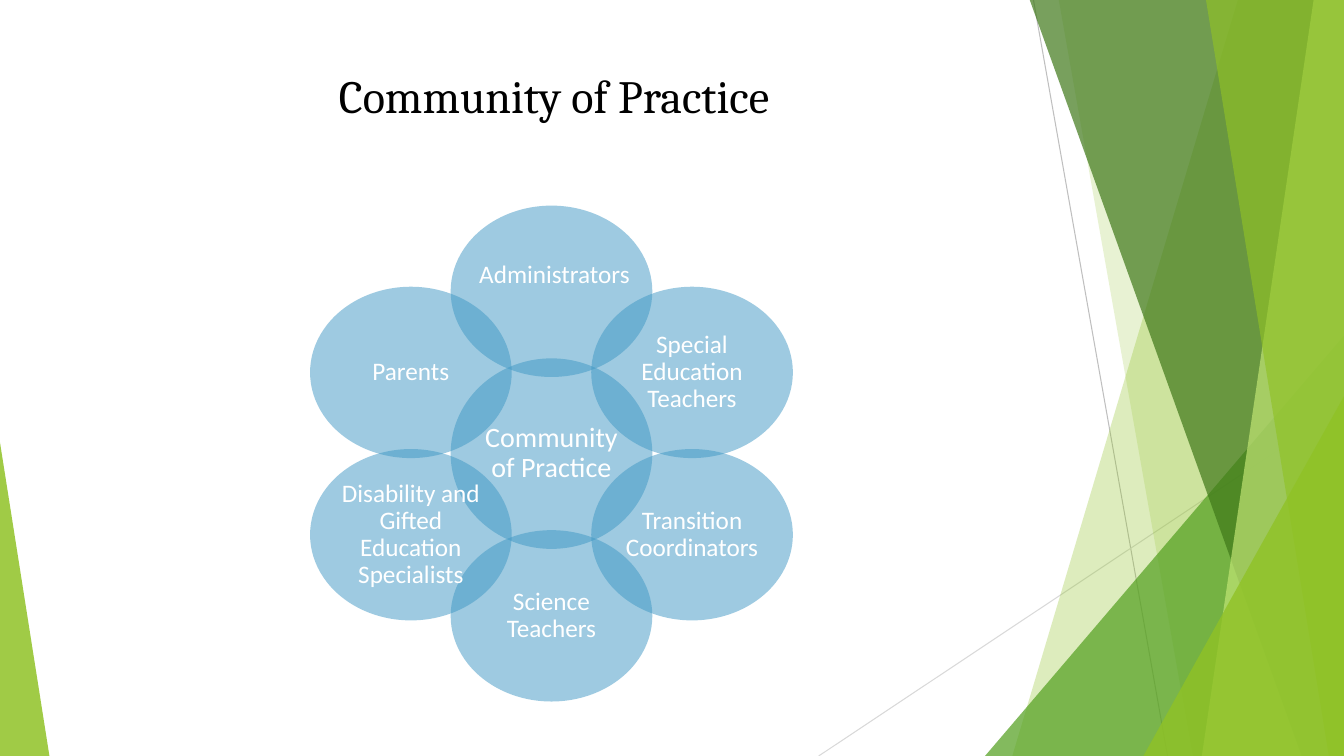
"""Build the Community of Practice slide with its faceted green border."""
import math
from dataclasses import dataclass

import pptx
import pptx.dml.color
import pptx.enum.shapes
import pptx.enum.text
import pptx.oxml
import pptx.oxml.ns
import pptx.util

Inches = pptx.util.Inches
RGBColor = pptx.dml.color.RGBColor
Shapes = pptx.enum.shapes.MSO_SHAPE
Anchor = pptx.enum.text.MSO_ANCHOR

BLACK = RGBColor(0x00, 0x00, 0x00)
WHITE = RGBColor(0xFF, 0xFF, 0xFF)
GRAY = RGBColor(0xBF, 0xBF, 0xBF)
LIGHT_GRAY = RGBColor(0xD9, 0xD9, 0xD9)
LIME = RGBColor(0x90, 0xC2, 0x26)
PALE_LIME = RGBColor(0xC0, 0xE4, 0x74)
GREEN = RGBColor(0x54, 0xA0, 0x21)
DARK_GREEN = RGBColor(0x3F, 0x78, 0x19)
BLUE = RGBColor(0x3E, 0x97, 0xC4)

WIDTH, HEIGHT = 13.33, 7.5
TOP = -0.01
CENTER_X, CENTER_Y = 5.47, 4.5
RING_RADIUS = 1.61
CIRCLE_WIDTH, CIRCLE_HEIGHT, HUB_HEIGHT = 2, 1.7, 1.89


@dataclass
class Ray:
    start: tuple[float, float]
    end: tuple[float, float]
    color: RGBColor


@dataclass
class Band:
    top_left: float
    bottom_left: float
    color: RGBColor
    opacity: int


@dataclass
class Wedge:
    left: float
    top: float
    width: float
    apex: float
    color: RGBColor
    opacity: int


RAYS = [
    Ray((10.25, 0), (11.58, HEIGHT), GRAY),
    Ray((WIDTH, 4.03), (8.12, HEIGHT), LIGHT_GRAY),
]
FACETS = [
    Band(12.28, 10.04, LIME, 30),
    Band(10.5, 11.83, LIME, 20),
    Wedge(9.77, 3.33, 3.56, 1, GREEN, 72),
    Band(10.21, 12.91, DARK_GREEN, 70),
    Band(13.03, 11.92, PALE_LIME, 70),
    Band(11.96, 13.18, LIME, 65),
    Wedge(11.34, 3.93, 1.99, 1, LIME, 80),
    Wedge(0, 4.39, 0.49, 0, LIME, 85),
]
MEMBERS = [
    "Administrators",
    "Special Education Teachers",
    "Transition Coordinators",
    "Science Teachers",
    "Disability and Gifted Education Specialists",
    "Parents",
]


def fill_shape(shape, color: RGBColor, opacity: int) -> None:
    shape.shadow.inherit = False
    shape.line.fill.background()
    shape.fill.solid()
    shape.fill.fore_color.rgb = color
    color_element = shape.fill._xPr.find(".//" + pptx.oxml.ns.qn("a:srgbClr"))
    alpha = pptx.oxml.parse_xml(
        f'<a:alpha {pptx.oxml.ns.nsdecls("a")} val="{opacity * 1000}"/>'
    )
    color_element.append(alpha)


def write_text(shape, text: str, *, size: float, font: str = "Calibri",
               color: RGBColor = WHITE, anchor=Anchor.MIDDLE,
               side_inset: float = 0.02, end_inset: float = 0.02,
               line_spacing: float = 0.9) -> None:
    frame = shape.text_frame
    frame.word_wrap = True
    frame.auto_size = pptx.enum.text.MSO_AUTO_SIZE.NONE
    frame.vertical_anchor = anchor
    frame.margin_left = frame.margin_right = Inches(side_inset)
    frame.margin_top = frame.margin_bottom = Inches(end_inset)
    frame.text = text
    paragraph = frame.paragraphs[0]
    paragraph.alignment = pptx.enum.text.PP_ALIGN.CENTER
    paragraph.line_spacing = line_spacing
    paragraph.font.size = pptx.util.Pt(size)
    paragraph.font.name = font
    paragraph.font.color.rgb = color


def draw_ray(slide, ray: Ray) -> None:
    connector = slide.shapes.add_connector(
        pptx.enum.shapes.MSO_CONNECTOR.STRAIGHT,
        *(Inches(value) for value in ray.start + ray.end),
    )
    connector.line.color.rgb = ray.color
    connector.line.width = pptx.util.Pt(0.75)
    connector._element.spPr.append(
        pptx.oxml.parse_xml(f'<a:effectLst {pptx.oxml.ns.nsdecls("a")}/>')
    )


def draw_band(slide, band: Band) -> None:
    builder = slide.shapes.build_freeform(Inches(band.top_left), Inches(TOP))
    corners = [(WIDTH, TOP), (WIDTH, HEIGHT), (band.bottom_left, HEIGHT)]
    builder.add_line_segments([(Inches(x), Inches(y)) for x, y in corners])
    fill_shape(builder.convert_to_shape(), band.color, band.opacity)


def draw_wedge(slide, wedge: Wedge) -> None:
    shape = slide.shapes.add_shape(
        Shapes.ISOSCELES_TRIANGLE, Inches(wedge.left), Inches(wedge.top),
        Inches(wedge.width), Inches(HEIGHT - wedge.top),
    )
    shape.adjustments[0] = wedge.apex
    fill_shape(shape, wedge.color, wedge.opacity)


def draw_circle(slide, center_x: float, center_y: float, height: float):
    shape = slide.shapes.add_shape(
        Shapes.OVAL, Inches(center_x - CIRCLE_WIDTH / 2),
        Inches(center_y - height / 2), Inches(CIRCLE_WIDTH), Inches(height),
    )
    fill_shape(shape, BLUE, 50)
    return shape


def draw_members(slide) -> None:
    hub = draw_circle(slide, CENTER_X, CENTER_Y, HUB_HEIGHT)
    write_text(hub, "Community of Practice", size=20,
               side_inset=0.03, end_inset=0.03)
    for index, member in enumerate(MEMBERS):
        angle = math.radians(index * 360 / len(MEMBERS))
        label = draw_circle(
            slide, CENTER_X + RING_RADIUS * math.sin(angle),
            CENTER_Y - RING_RADIUS * math.cos(angle), CIRCLE_HEIGHT,
        )
        if index == 0:
            label = slide.shapes.add_textbox(
                Inches(4.65), Inches(2.13), Inches(1.7), Inches(1.2)
            )
        write_text(label, member, size=18)


def main() -> None:
    presentation = pptx.Presentation()
    presentation.slide_width = Inches(WIDTH)
    presentation.slide_height = Inches(HEIGHT)
    slide = presentation.slides.add_slide(presentation.slide_layouts[5])
    for ray in RAYS:
        draw_ray(slide, ray)
    for facet in FACETS:
        if isinstance(facet, Band):
            draw_band(slide, facet)
        else:
            draw_wedge(slide, facet)
    title = slide.shapes.title
    title.left, title.top = Inches(0.83), Inches(0.44)
    title.width, title.height = Inches(9.33), Inches(0.83)
    write_text(title, "Community of Practice", size=33, font="Cambria",
               color=BLACK, anchor=Anchor.BOTTOM, side_inset=0.1,
               end_inset=0.05, line_spacing=1.0)
    draw_members(slide)
    presentation.save("out.pptx")


if __name__ == "__main__":
    main()
